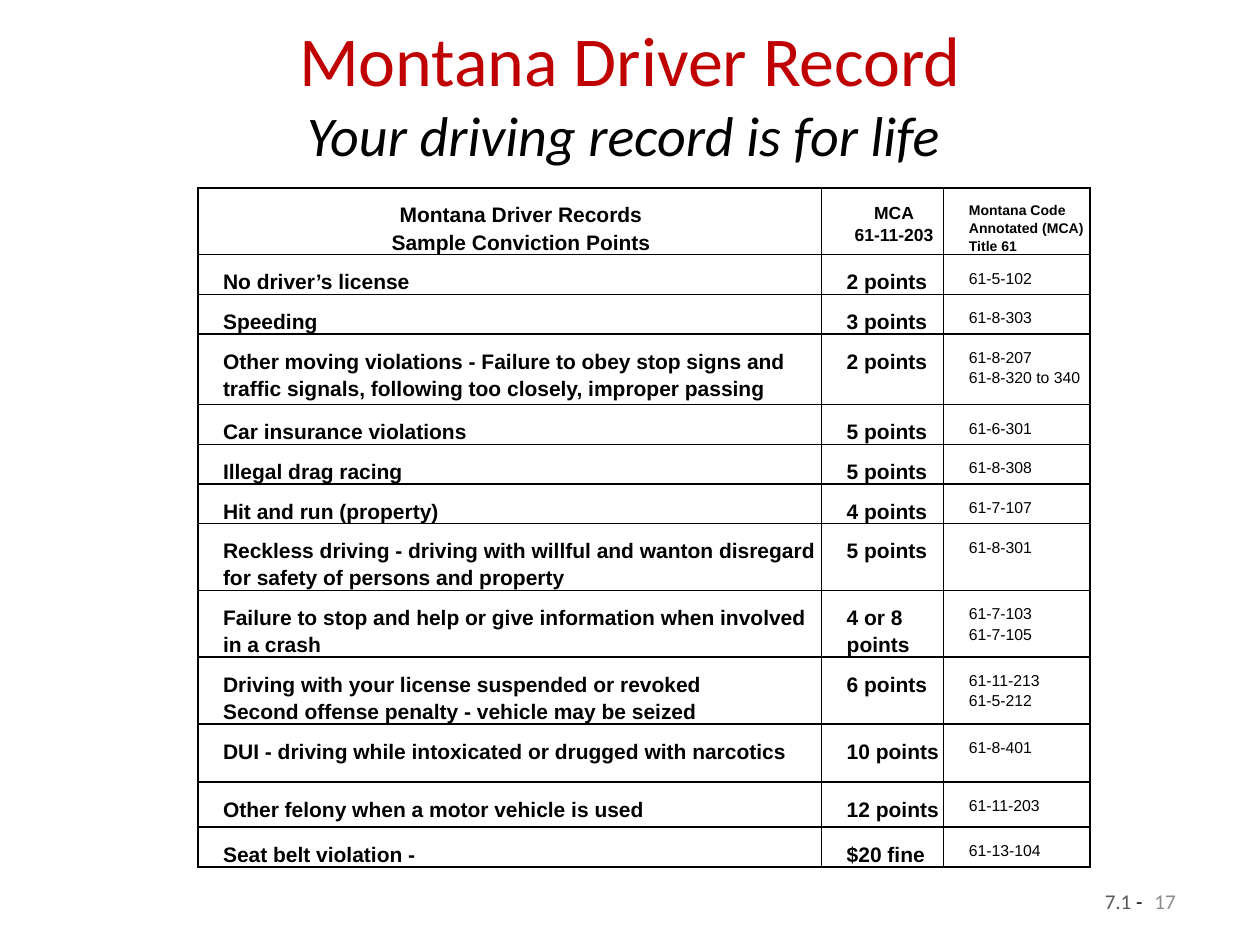
from copy import deepcopy

from lxml.etree import SubElement
from pptx import Presentation
from pptx.dml.color import RGBColor
from pptx.enum.text import MSO_ANCHOR as Anchor, MSO_AUTO_SIZE as AutoSize, PP_ALIGN as Align
from pptx.oxml.ns import qn
from pptx.util import Inches, Pt

FONT, BLACK, WHITE = "Arial", "000000", "FFFFFF"


def style(run, color, **values):
    for name, value in values.items():
        setattr(run.font, name, value)
    run.font.color.rgb = RGBColor.from_string(color)


def add_borders(cell, width):
    properties = cell._tc.get_or_add_tcPr()
    for position, side in enumerate(("lnL", "lnR", "lnT", "lnB")):
        line = SubElement(properties, qn(f"a:{side}"), w=str(width))
        fill = SubElement(line, qn("a:solidFill"))
        SubElement(fill, qn("a:srgbClr"), val=BLACK)
        properties.insert(position, line)


prs = Presentation()
prs.slide_width, prs.slide_height = Inches(10), Inches(7.5)
slide = prs.slides.add_slide(prs.slide_layouts[5])

# Title and subtitle
title = slide.shapes.title
title.left, title.top, title.width, title.height = map(Inches, (0.5, 0.27, 9, 0.92))
title.text_frame.auto_size = AutoSize.NONE
title.text_frame.vertical_anchor = Anchor.MIDDLE
heading = title.text_frame.paragraphs[0]
heading.alignment = Align.CENTER
main_line = heading.add_run()
main_line.text = "Montana Driver Record"
style(main_line, "C00000", name="Calibri", size=Pt(40))
heading.add_line_break()
subtitle = heading.add_run()
subtitle.text = "Your driving record is for life "
style(subtitle, BLACK, name="Calibri", size=Pt(32), italic=True)

# Conviction points: row height, offence, points, code sections
records = [
    (0.52, "Montana Driver Records\vSample Conviction Points", "MCA\v61-11-203",
     "Montana Code Annotated (MCA)\vTitle 61"),
    (0.31, "No driver’s license", "2 points", "61-5-102"),
    (0.31, "Speeding", "3 points", "61-8-303"),
    (0.56, "Other moving violations - Failure to obey stop signs and traffic signals, "
           "following too closely, improper passing", "2 points", "61-8-207\v61-8-320 to 340"),
    (0.31, "Car insurance violations", "5 points", "61-6-301"),
    (0.31, "Illegal drag racing", "5 points", "61-8-308"),
    (0.31, "Hit and run (property)", "4 points", "61-7-107"),
    (0.52, "Reckless driving - driving with willful and wanton disregard "
           "for safety of persons and property", "5 points", "61-8-301"),
    (0.52, "Failure to stop and help or give information when involved in a crash",
     "4 or 8 points", "61-7-103\v61-7-105"),
    (0.52, "Driving with your license suspended or revoked\v"
           "Second offense penalty - vehicle may be seized", "6 points", "61-11-213\v61-5-212"),
    (0.46, "DUI - driving while intoxicated or drugged with narcotics", "10 points", "61-8-401"),
    (0.36, "Other felony when a motor vehicle is used", "12 points", "61-11-203"),
    (0.31, "Seat belt violation -", "$20 fine", "61-13-104"),
]
column_widths = (4.95, 0.97, 1.16)
header_sizes, body_sizes = (12, 10, 8), (12, 12, 9)
margins = dict(margin_left=0.2, margin_top=0.1, margin_right=0.02, margin_bottom=0)

points = slide.shapes.add_table(
    len(records), len(column_widths), Inches(1.57), Inches(1.49),
    Inches(sum(column_widths)), Inches(sum(record[0] for record in records))).table
points.first_row = points.horz_banding = False
for column, width in zip(points.columns, column_widths):
    column.width = Inches(width)

for r, (height, *entries) in enumerate(records):
    points.rows[r].height = Inches(height)
    is_header = r == 0
    sizes = header_sizes if is_header else body_sizes
    for c, (entry, size) in enumerate(zip(entries, sizes)):
        cell = points.cell(r, c)
        for name, value in margins.items():
            setattr(cell, name, Inches(value))
        cell.fill.solid()
        cell.fill.fore_color.rgb = RGBColor.from_string(WHITE)
        add_borders(cell, Pt(1))
        paragraph = cell.text_frame.paragraphs[0]
        paragraph.text = entry
        paragraph.line_spacing = 1.15
        paragraph.alignment = Align.CENTER if is_header and c < 2 else Align.LEFT
        for run in paragraph.runs:
            style(run, BLACK, name=FONT, size=Pt(size), bold=is_header or c < 2)
        # A line break takes the text size of its line
        for line_break in paragraph._p.findall(qn("a:br")):
            line_break.append(deepcopy(paragraph.runs[0]._r.rPr))

# Footer: section and page number
footers = [
    ((8.67, 7, 0.78, 0.3), Align.LEFT, Anchor.TOP, [("7.1 ", "595959"), ("-", BLACK)]),
    ((7.1, 6.95, 2.33, 0.4), Align.RIGHT, Anchor.MIDDLE, [("17", "8C8C8C")]),
]
for box, alignment, anchor, parts in footers:
    frame = slide.shapes.add_textbox(*map(Inches, box)).text_frame
    frame.word_wrap = True
    frame.vertical_anchor = anchor
    frame.paragraphs[0].alignment = alignment
    for text, color in parts:
        run = frame.paragraphs[0].add_run()
        run.text = text
        style(run, color, name="Calibri", size=Pt(12))

prs.save("out.pptx")
